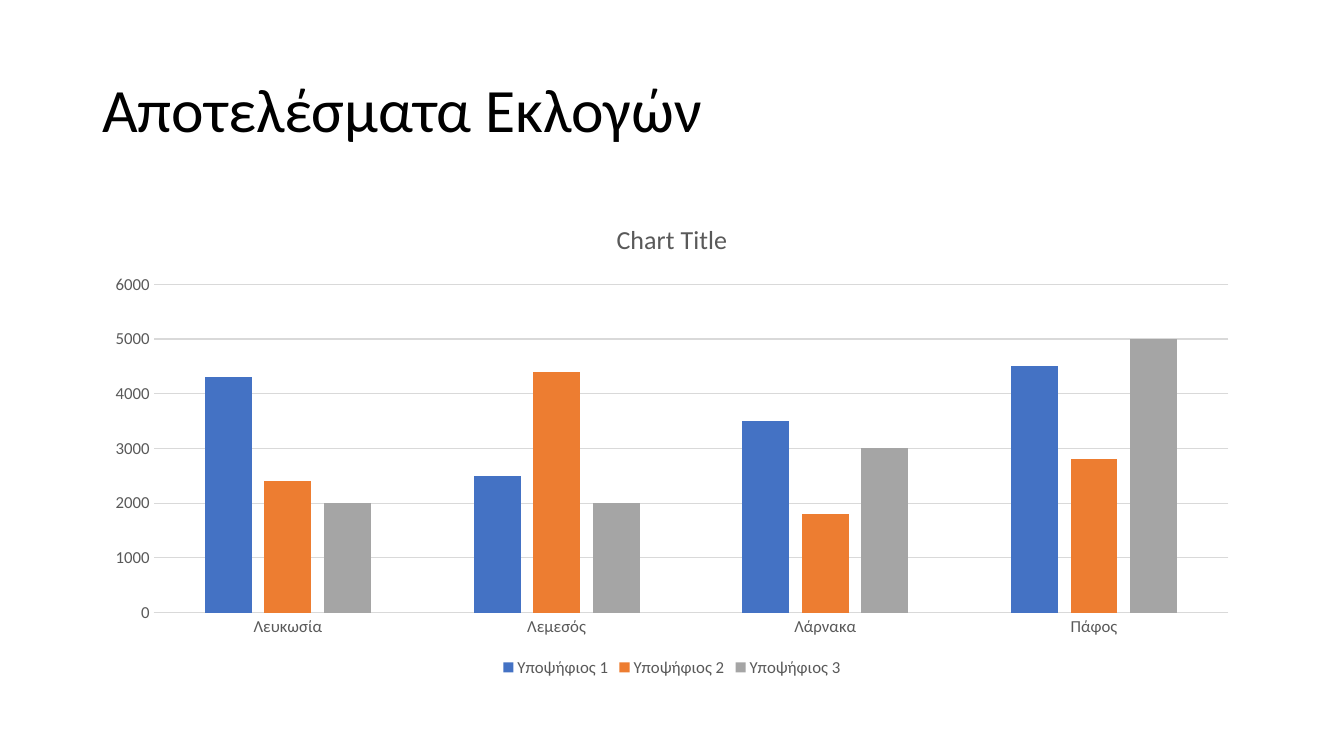
from pptx import Presentation
from pptx import util as u
from pptx.chart.data import CategoryChartData
from pptx.dml.color import RGBColor
from pptx.enum import chart as ch, text

PX = 9525
FONT = "Calibri"
GREY = "595959"
RULE = "D9D9D9"
DISTRICTS = ["Λευκωσία", "Λεμεσός", "Λάρνακα", "Πάφος"]
CANDIDATES = [
    ("Υποψήφιος 1", [4300, 2500, 3500, 4500], "4472C4"),
    ("Υποψήφιος 2", [2400, 4400, 1800, 2800], "ED7D31"),
    ("Υποψήφιος 3", [2000, 2000, 3000, 5000], "A5A5A5"),
]


def px(*lengths):
    return [u.Emu(length * PX) for length in lengths]


def rgb(color):
    return RGBColor.from_string(color)


def set_font(font, size, color):
    font.name = FONT
    font.size = u.Pt(size)
    font.bold = False
    font.color.rgb = rgb(color)


def set_line(line, color):
    line.color.rgb = rgb(color)
    line.width = u.Pt(0.75)


def add_heading(slide, wording, box):
    frame = slide.shapes.add_textbox(*px(*box)).text_frame
    frame.word_wrap = True
    frame.vertical_anchor = text.MSO_ANCHOR.MIDDLE
    paragraph = frame.paragraphs[0]
    paragraph.line_spacing = 0.9
    run = paragraph.add_run()
    run.text = wording
    set_font(run.font, 44, "000000")


def style_axis(axis):
    axis.major_tick_mark = axis.minor_tick_mark = ch.XL_TICK_MARK.NONE
    set_font(axis.tick_labels.font, 12, GREY)


def add_results(slide, box):
    results = CategoryChartData(number_format="General")
    results.categories = DISTRICTS
    for name, votes, _ in CANDIDATES:
        results.add_series(name, votes)
    chart = slide.shapes.add_chart(
        ch.XL_CHART_TYPE.COLUMN_CLUSTERED, *px(*box), results).chart
    set_font(chart.font, 10, "000000")

    chart.has_title = True
    caption = chart.chart_title.text_frame.paragraphs[0].add_run()
    caption.text = "Chart Title"
    set_font(caption.font, 18.6, GREY)
    chart.chart_title.include_in_layout = False

    chart.has_legend = True
    chart.legend.position = ch.XL_LEGEND_POSITION.BOTTOM
    chart.legend.include_in_layout = False
    set_font(chart.legend.font, 12, GREY)

    districts, votes = chart.category_axis, chart.value_axis
    style_axis(districts)
    set_line(districts.format.line, RULE)
    style_axis(votes)
    votes.format.line.fill.background()
    votes.minimum_scale, votes.maximum_scale, votes.major_unit = 0, 6000, 1000
    set_line(votes.major_gridlines.format.line, RULE)

    plot = chart.plots[0]
    plot.vary_by_categories = False
    plot.gap_width, plot.overlap = 219, -27
    for series, (_, _, color) in zip(plot.series, CANDIDATES):
        series.format.fill.solid()
        series.format.fill.fore_color.rgb = rgb(color)


def main():
    deck = Presentation()
    deck.slide_width, deck.slide_height = px(1280, 720)
    slide = deck.slides.add_slide(deck.slide_layouts[6])
    add_heading(slide, "Αποτελέσματα Εκλογών", (88, 38, 1104, 139))
    add_results(slide, (88, 192, 1104, 457))
    deck.save("out.pptx")


if __name__ == "__main__":
    main()
